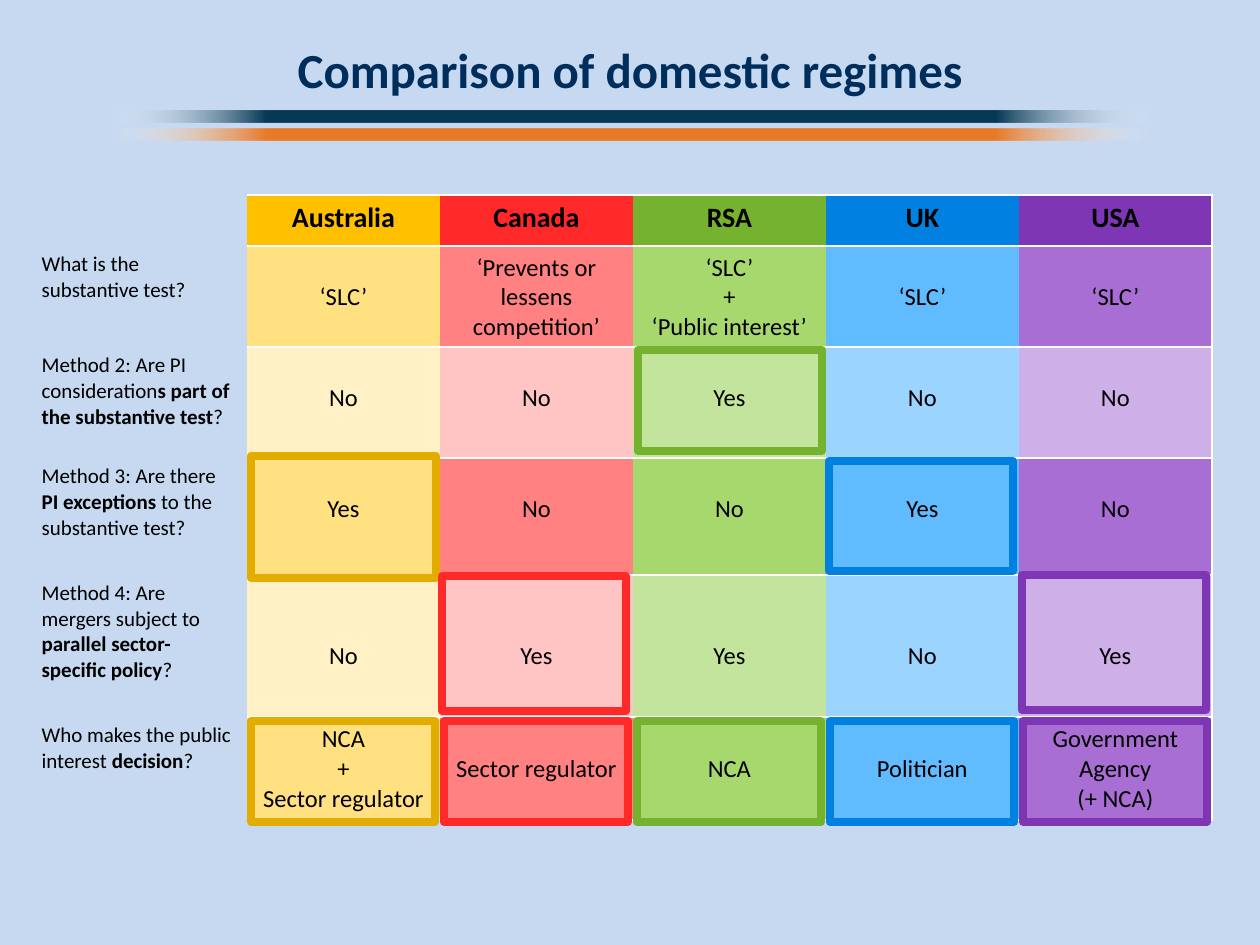
from lxml import etree
from pptx import Presentation
from pptx.dml.color import RGBColor
from pptx.enum.shapes import MSO_SHAPE
from pptx.enum.text import MSO_ANCHOR, MSO_AUTO_SIZE, PP_ALIGN
from pptx.oxml import parse_xml
from pptx.util import Pt

PX = 7257
RECTANGLE = MSO_SHAPE.RECTANGLE
TOP, MIDDLE = MSO_ANCHOR.TOP, MSO_ANCHOR.MIDDLE
LEFT, CENTER = PP_ALIGN.LEFT, PP_ALIGN.CENTER
NO_AUTO_SIZE = MSO_AUTO_SIZE.NONE
DRAWING = "http://schemas.openxmlformats.org/drawingml/2006/main"
COLORS = {
    "background": "C6D9F1", "title": "002E5C", "text": "000000", "white": "FFFFFF",
    "navy": "073A57", "orange": "E87B2A",
}
COUNTRIES = [
    {"name": "Australia", "header": "FFC000", "strong": "FFE181", "pale": "FFF1C5", "frame": "E2AC00"},
    {"name": "Canada", "header": "FF2929", "strong": "FF8181", "pale": "FFC5C5", "frame": "FF2929"},
    {"name": "RSA", "header": "74B230", "strong": "A6D86E", "pale": "C2E49C", "frame": "74B230"},
    {"name": "UK", "header": "0081E2", "strong": "61BBFF", "pale": "9BD4FF", "frame": "0081E2"},
    {"name": "USA", "header": "7E36B4", "strong": "A86ED4", "pale": "CFAFE7", "frame": "7E36B4"},
]
QUESTIONS = [
    "What is the substantive test?",
    "Method 2: Are PI consideration*s part of the substantive test*?",
    "Method 3: Are there *PI exceptions *to the substantive test?",
    "Method 4: Are mergers subject to *parallel sector-specific policy*?",
    "Who makes the public interest *decision*?",
]
ANSWERS = [
    ["‘SLC’", "‘Prevents or lessens competition’", "‘SLC’\n+\n‘Public interest’", "‘SLC’", "‘SLC’"],
    ["No", "No", "Yes", "No", "No"],
    ["Yes", "No", "No", "Yes", "No"],
    ["No", "Yes", "Yes", "No", "Yes"],
    ["NCA\n+\nSector regulator", "Sector regulator", "NCA", "Politician", "Government Agency\n(+ NCA)"],
]
ROW_HEIGHTS = [51, 101, 111, 117, 142, 103]
TOP_MARGINS = [6, 6, 36, 36, 66, 9]
LABEL_WIDTH, COLUMN_WIDTH = 218, 193


def write(text_frame, text, size=14, color="text", bold=False, align=CENTER):
    for index, line in enumerate(text.split("\n")):
        paragraph = text_frame.paragraphs[0] if index == 0 else text_frame.add_paragraph()
        paragraph.alignment = align
        for part, words in enumerate(line.split("*")):
            run = paragraph.add_run()
            run.text = words
            run.font.name = "Calibri"
            run.font.size = Pt(size)
            run.font.bold = bold or part % 2 == 1
            run.font.color.rgb = RGBColor.from_string(COLORS[color])


def set_borders(cell, sides):
    properties = cell._tc.get_or_add_tcPr()
    for side in "LRTB":
        line = etree.SubElement(properties, f"{{{DRAWING}}}ln{side}", w="12700")
        if side in sides:
            fill = etree.SubElement(line, f"{{{DRAWING}}}solidFill")
            etree.SubElement(fill, f"{{{DRAWING}}}srgbClr", val=COLORS["white"])
        else:
            etree.SubElement(line, f"{{{DRAWING}}}noFill")


presentation = Presentation()
presentation.slide_width, presentation.slide_height = 1260 * PX, 945 * PX
slide = presentation.slides.add_slide(presentation.slide_layouts[5])
slide.background.fill.solid()
slide.background.fill.fore_color.rgb = RGBColor.from_string(COLORS["background"])

title = slide.shapes.title
title.left, title.top, title.width, title.height = 0, 33 * PX, 1260 * PX, 72 * PX
title.text_frame.auto_size = NO_AUTO_SIZE
title.text_frame.vertical_anchor = MIDDLE
write(title.text_frame, "Comparison of domestic regimes", size=28, color="title", bold=True)

rules = slide.shapes.add_group_shape()
for top, color in [(111, "navy"), (129, "orange")]:
    rule = rules.shapes.add_shape(RECTANGLE, 111 * PX, top * PX, 1040 * PX, 12 * PX)
    rule.shadow.inherit = False
    rule.line.fill.background()
    rule.fill.background()
    clear = f'<a:srgbClr val="{COLORS["white"]}"><a:alpha val="0"/></a:srgbClr>'
    solid = f'<a:srgbClr val="{COLORS[color]}"/>'
    stops = "".join(
        f'<a:gs pos="{position * 1000}">{stop}</a:gs>'
        for position, stop in [(0, clear), (15, solid), (85, solid), (100, clear)]
    )
    gradient = parse_xml(
        f'<a:gradFill xmlns:a="{DRAWING}"><a:gsLst>{stops}</a:gsLst><a:lin ang="0" scaled="0"/></a:gradFill>'
    )
    no_fill = rule._element.spPr.find(f"{{{DRAWING}}}noFill")
    no_fill.getparent().replace(no_fill, gradient)

table = slide.shapes.add_table(
    6, 6, 29 * PX, 195 * PX, (LABEL_WIDTH + 5 * COLUMN_WIDTH) * PX, sum(ROW_HEIGHTS) * PX
).table
table.first_row = False
table.horz_banding = False
for index, column in enumerate(table.columns):
    column.width = (COLUMN_WIDTH if index else LABEL_WIDTH) * PX

for row_index, height in enumerate(ROW_HEIGHTS):
    table.rows[row_index].height = height * PX
    for column_index in range(6):
        cell = table.cell(row_index, column_index)
        cell.margin_bottom = 4 * PX
        cell.margin_top = 6 * PX
        cell.vertical_anchor = TOP
        set_borders(cell, "RTB" if column_index else "")
        cell.fill.solid()
        if column_index == 0:
            fill_color = COLORS["background"]
            if row_index:
                write(cell.text_frame, QUESTIONS[row_index - 1], size=12, align=LEFT)
        else:
            country = COUNTRIES[column_index - 1]
            if row_index == 0:
                fill_color = country["header"]
                write(cell.text_frame, country["name"], size=16, bold=True)
            else:
                fill_color = country["strong" if row_index % 2 else "pale"]
                write(cell.text_frame, ANSWERS[row_index - 1][column_index - 1])
                if row_index in (1, 5):
                    cell.vertical_anchor = MIDDLE
                else:
                    cell.margin_top = TOP_MARGINS[row_index] * PX
        cell.fill.fore_color.rgb = RGBColor.from_string(fill_color)

method_frames = [
    (0, 251, 456, 185, 122),
    (1, 442, 576, 184, 135),
    (2, 638, 350, 184, 101),
    (3, 829, 461, 184, 110),
    (4, 1022, 575, 184, 135),
]
decision_frames = [(index, 251 + index * COLUMN_WIDTH, 721, 184, 101) for index in range(5)]
for index, left, top, width, height in method_frames + decision_frames:
    frame = slide.shapes.add_shape(RECTANGLE, left * PX, top * PX, width * PX, height * PX)
    frame.shadow.inherit = False
    frame.fill.background()
    frame.line.width = Pt(4.5)
    frame.line.color.rgb = RGBColor.from_string(COUNTRIES[index]["frame"])

presentation.save("out.pptx")
